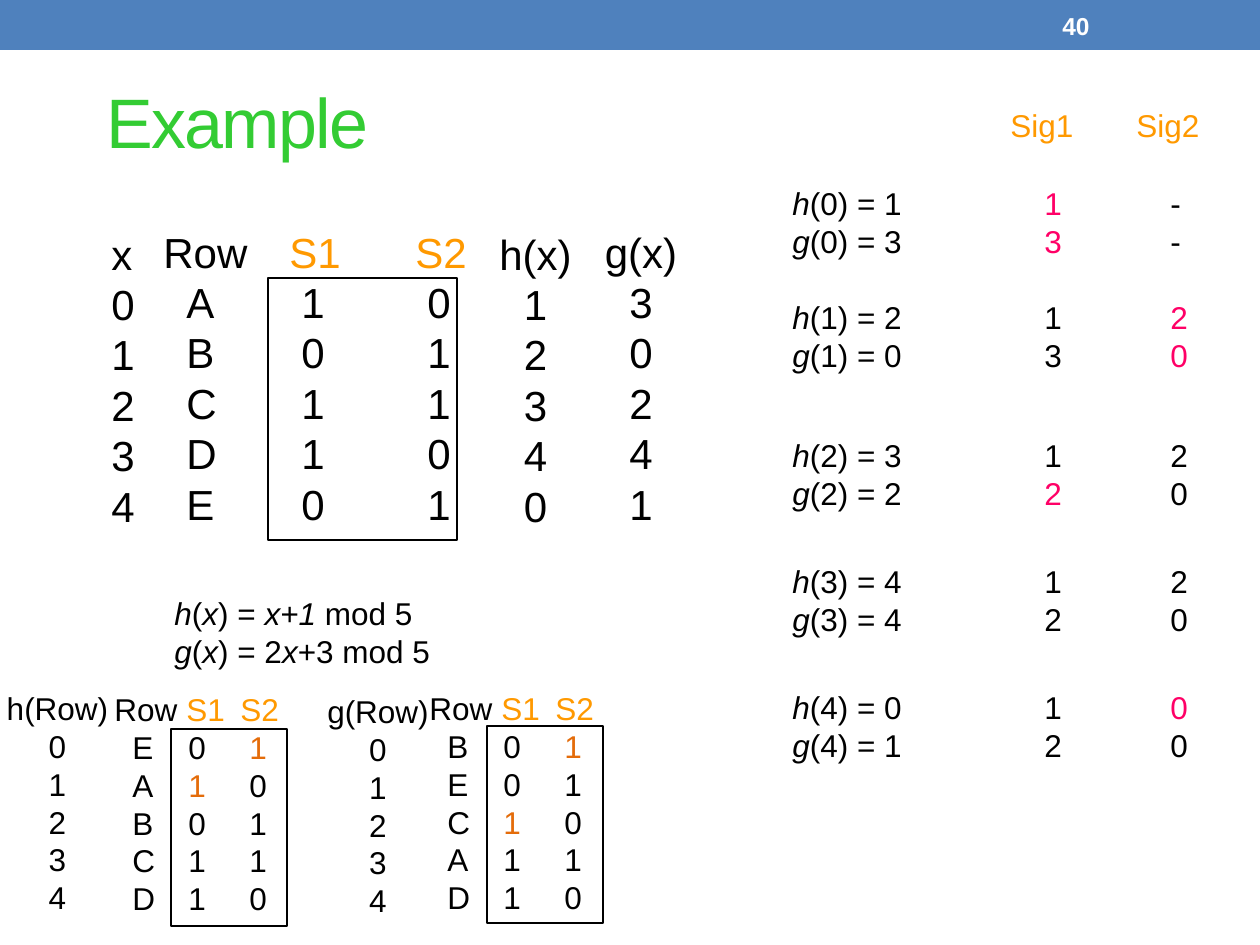
from itertools import chain

from lxml import etree
from pptx import Presentation
from pptx.dml.color import RGBColor
from pptx.enum.shapes import MSO_SHAPE
from pptx.enum.text import MSO_ANCHOR, MSO_AUTO_SIZE, PP_ALIGN
from pptx.oxml.ns import qn
from pptx.util import Emu, Pt

RECT = MSO_SHAPE.RECTANGLE
MIDDLE, TOP = MSO_ANCHOR.MIDDLE, MSO_ANCHOR.TOP
LEFT, CENTER = PP_ALIGN.LEFT, PP_ALIGN.CENTER
PX = 914400 // 126

THEME = {
    "font": "Arial", "title": 40, "large": 24, "small": 18, "page": 14,
    "lead": 1.2, "line": 0.75,
    "green": "33CC33", "blue": "4F81BD", "white": "FFFFFF", "black": "000000",
    "orange": "FF9900", "ember": "E46C0A", "pink": "FF0066",
}

# Inline marks: *italic*, ^orange^, _ember_, ~pink~
MARKS = {"^": "orange", "_": "ember", "~": "pink"}

TITLE = ("Example", (94, 42, 494, 157))
PAGE = ("40", (1050, 3, 147, 45))
BAND = (0, 0, 1260, 50)

# Tables: place, size, tab stops of the head and of the body, rows
TABLES = [
    ((151, 220, 331, 318), "large", (126, 252), (23, 138, 264), [
        ("Row", "^S1^", "^S2^"),
        ("A", "1", "0"), ("B", "0", "1"), ("C", "1", "1"),
        ("D", "1", "0"), ("E", "0", "1")]),
    ((102, 684, 200, 280), "small", (72, 126), (18, 74, 135), [
        ("Row", "^S1^", "^S2^"),
        ("E", "0", "_1_"), ("A", "_1_", "0"), ("B", "0", "1"),
        ("C", "1", "1"), ("D", "1", "0")]),
    ((417, 683, 200, 280), "small", (72, 126), (18, 74, 135), [
        ("Row", "^S1^", "^S2^"),
        ("B", "0", "_1_"), ("E", "0", "1"), ("C", "_1_", "0"),
        ("A", "1", "1"), ("D", "1", "0")]),
]
FRAMES = [(268, 278, 189, 262), (171, 729, 116, 197), (487, 726, 116, 197)]

# Single columns: place, size, alignment, entries
COLUMNS = [
    ((99, 222, 56, 318), "large", LEFT, ["x", *"01234"]),
    ((483, 222, 105, 318), "large", CENTER, ["h(x)", *"12340"]),
    ((588, 220, 106, 318), "large", CENTER, ["g(x)", *"30241"]),
    ((-10, 683, 135, 242), "small", CENTER, ["h(Row)", *"01234"]),
    ((306, 686, 144, 242), "small", CENTER, ["g(Row)", *"01234"]),
    ((162, 588, 300, 90), "small", LEFT,
     ["*h*(*x*) = *x+1* mod 5", "*g*(*x*) = 2*x*+3 mod 5"]),
]

# Signature steps: top, then (hash value, Sig1, Sig2) for h and for g
SIGS = ("^Sig1^", "^Sig2^")
STEPS = [
    (178, (1, "~1~", "-"), (3, "~3~", "-")),
    (292, (2, "1", "~2~"), (0, "3", "~0~")),
    (430, (3, "1", "2"), (2, "~2~", "0")),
    (556, (4, "1", "2"), (4, "2", "0")),
    (682, (0, "1", "~0~"), (1, "2", "0")),
]


def rgb(name):
    return RGBColor.from_string(THEME[name])


def scale(place):
    return [Emu(v * PX) for v in place]


def split(line):
    """Yield (text, italic, colour) for each run of a marked line."""
    text, slant, tint = "", False, "black"
    for char in line:
        if char != "*" and char not in MARKS:
            text += char
            continue
        if text:
            yield text, slant, tint
        text = ""
        if char == "*":
            slant = not slant
        else:
            tint = MARKS[char] if tint == "black" else "black"
    if text:
        yield text, slant, tint


def style(font, **form):
    form = {"name": THEME["font"], "bold": False, **form}
    font.color.rgb = rgb(form.pop("tint"))
    for key, value in form.items():
        setattr(font, key, value)


def set_tabs(para, stops):
    props = para._p.get_or_add_pPr()
    tabs = etree.SubElement(props, qn("a:tabLst"))
    for stop in stops:
        etree.SubElement(tabs, qn("a:tab"), pos=str(stop * PX), algn="l")


def set_frame(frame, anchor):
    form = {"word_wrap": True, "auto_size": MSO_AUTO_SIZE.NONE,
            "vertical_anchor": anchor}
    for key, value in form.items():
        setattr(frame, key, value)


def add_text(slide, place, size, lines, align=LEFT, tabs=()):
    """Add marked lines; tabs holds one tuple of stops for each line."""
    frame = slide.shapes.add_textbox(*scale(place)).text_frame
    set_frame(frame, TOP)
    for i, line in enumerate(lines):
        para = frame.add_paragraph() if i else frame.paragraphs[0]
        para.alignment = align
        para.line_spacing = Pt(THEME[size] * THEME["lead"])
        if tabs:
            set_tabs(para, tabs[i])
        for text, slant, tint in split(line):
            run = para.add_run()
            run.text = text
            style(run.font, size=Pt(THEME[size]), italic=slant, tint=tint)


def add_table_text(slide, place, size, head, body, rows):
    first, *rest = ["\t".join(row) for row in rows]
    lines = [first, *("\t" + line for line in rest)]
    add_text(slide, place, size, lines, tabs=[head, *[body] * len(rest)])


def add_rect(slide, place, fill=None):
    rect = slide.shapes.add_shape(RECT, *scale(place))
    rect.shadow.inherit = False
    if fill:
        rect.fill.solid()
        rect.fill.fore_color.rgb = rgb(fill)
        rect.line.fill.background()
    else:
        rect.fill.background()
        rect.line.color.rgb = rgb("black")
        rect.line.width = Pt(THEME["line"])


def add_heads(slide):
    add_rect(slide, BAND, "blue")
    text, place = PAGE
    page = slide.shapes.add_textbox(*scale(place)).text_frame
    set_frame(page, MIDDLE)
    page.text = text
    style(page.paragraphs[0].runs[0].font, size=Pt(THEME["page"]),
          bold=True, tint="white")

    text, place = TITLE
    title = slide.shapes.title
    title.left, title.top, title.width, title.height = scale(place)
    title.text = text
    set_frame(title.text_frame, MIDDLE)
    para = title.text_frame.paragraphs[0]
    para.alignment = LEFT
    run = para.runs[0]
    style(run.font, size=Pt(THEME["title"]), tint="green")
    run._r.get_or_add_rPr().set("spc", "-100")


def add_steps(slide):
    add_text(slide, (998, 100, 231, 63), "small", ["\t".join(SIGS)],
             tabs=[(126,)])
    for i, (top, *pair) in enumerate(STEPS):
        lines = [f"*{name}*({i}) = {value}\t{one}\t{two}"
                 for name, (value, one, two) in zip("hg", pair)]
        add_text(slide, (780, top, 440, 90), "small", lines,
                 tabs=[(252, 378)] * len(lines))


def main():
    deck = Presentation()
    deck.slide_width, deck.slide_height = scale((1260, 945))
    slide = deck.slides.add_slide(deck.slide_layouts[5])
    add_heads(slide)
    for table in TABLES:
        add_table_text(slide, *table)
    for frame in FRAMES:
        add_rect(slide, frame)
    for place, size, align, lines in COLUMNS:
        add_text(slide, place, size, lines, align)
    add_steps(slide)
    deck.save("out.pptx")


if __name__ == "__main__":
    main()
